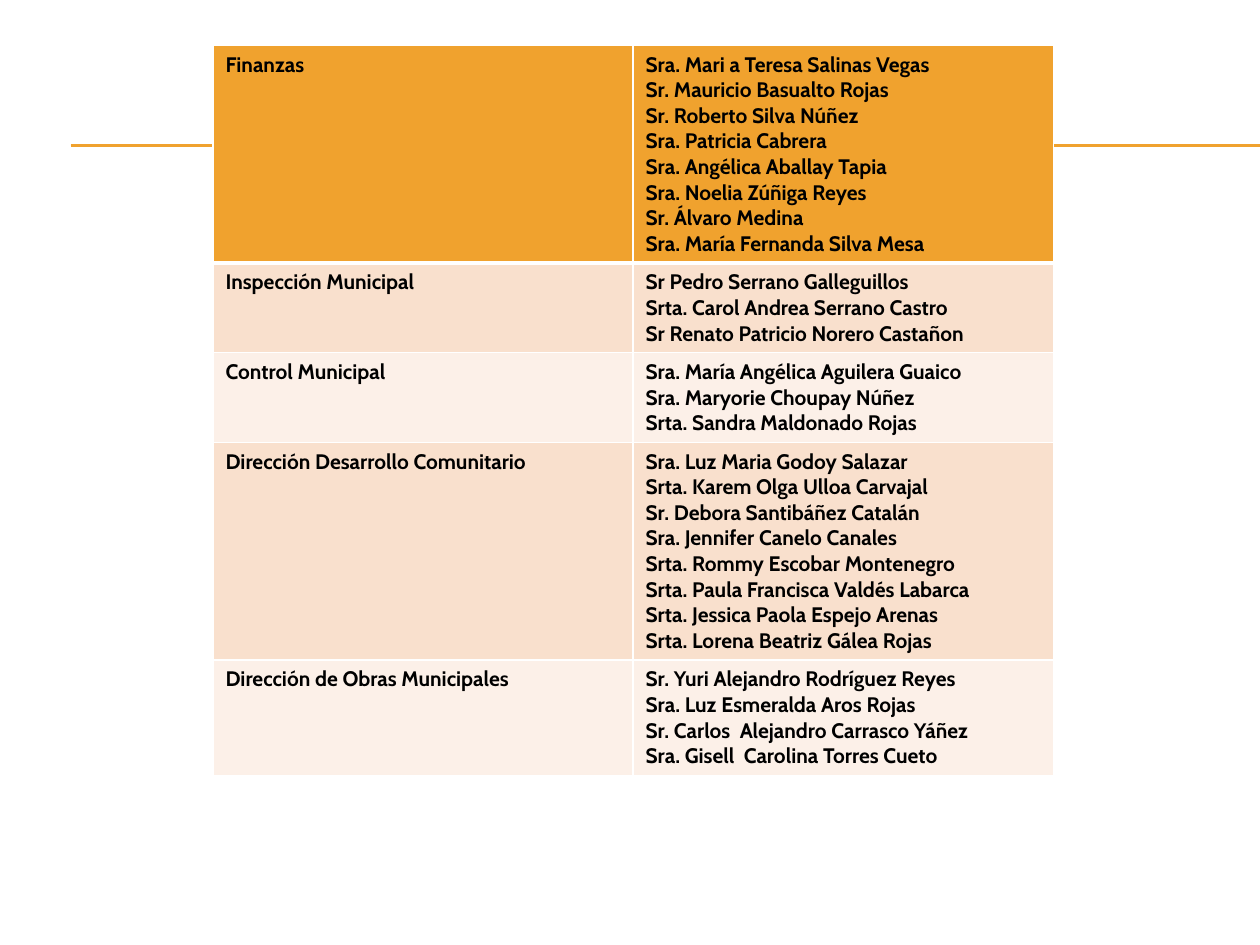
from dataclasses import dataclass

from lxml.etree import SubElement
from pptx import Presentation
from pptx.dml.color import RGBColor as Color
from pptx.enum.shapes import MSO_CONNECTOR as Connector
from pptx.oxml.ns import qn
from pptx.util import Inches, Pt


@dataclass(frozen=True)
class Theme:
    """Colours, font and sizes of the slide."""
    font: str = "Cabin"
    text_size: float = 12
    text: str = "000000"
    accent: str = "F0A22E"
    bands: tuple = ("FCF0E8", "F9E0CD")
    border: str = "FFFFFF"
    border_width: float = 1
    header_border_width: float = 3
    rule_width: float = 0.75


THEME = Theme()

DEPARTMENTS = [
    ("Finanzas", [
        "Sra. Mari a Teresa Salinas Vegas",
        "Sr. Mauricio Basualto Rojas",
        "Sr. Roberto Silva Núñez",
        "Sra. Patricia Cabrera",
        "Sra. Angélica Aballay Tapia",
        "Sra. Noelia Zúñiga Reyes",
        "Sr. Álvaro Medina",
        "Sra. María Fernanda Silva Mesa",
    ]),
    ("Inspección Municipal", [
        "Sr Pedro Serrano Galleguillos",
        "Srta. Carol Andrea Serrano Castro",
        "Sr Renato Patricio Norero Castañon",
    ]),
    ("Control Municipal", [
        "Sra. María Angélica Aguilera Guaico",
        "Sra. Maryorie Choupay Núñez",
        "Srta. Sandra Maldonado Rojas",
    ]),
    ("Dirección Desarrollo Comunitario", [
        "Sra. Luz Maria Godoy Salazar",
        "Srta. Karem Olga Ulloa Carvajal",
        "Sr. Debora Santibáñez Catalán",
        "Sra. Jennifer Canelo Canales",
        "Srta. Rommy Escobar Montenegro",
        "Srta. Paula Francisca Valdés Labarca",
        "Srta. Jessica Paola Espejo Arenas",
        "Srta. Lorena Beatriz Gálea Rojas",
    ]),
    ("Dirección de Obras Municipales", [
        "Sr. Yuri Alejandro Rodríguez Reyes",
        "Sra. Luz Esmeralda Aros Rojas",
        "Sr. Carlos  Alejandro Carrasco Yáñez",
        "Sra. Gisell  Carolina Torres Cueto",
    ]),
]


def add_rule(page, top):
    """Draw a thin horizontal rule running to the right edge."""
    rule = page.shapes.add_connector(
        Connector.STRAIGHT, Inches(0.56), Inches(top), Inches(10), Inches(top))
    rule.line.color.rgb = Color.from_string(THEME.accent)
    rule.line.width = Pt(THEME.rule_width)
    SubElement(rule._element.spPr, qn("a:effectLst"))


def set_borders(cell, top_width, bottom_width):
    """Give a cell its four solid borders."""
    properties = cell._tc.get_or_add_tcPr()
    side_width = THEME.border_width
    widths = {"L": side_width, "R": side_width, "T": top_width, "B": bottom_width}
    for side, width in widths.items():
        border = SubElement(properties, qn(f"a:ln{side}"), w=str(Pt(width)))
        fill = SubElement(border, qn("a:solidFill"))
        SubElement(fill, qn("a:srgbClr"), val=THEME.border)


def fill_cell(cell, lines, colour):
    """Write one paragraph per line and colour the cell."""
    cell.fill.solid()
    cell.fill.fore_color.rgb = Color.from_string(colour)
    cell.text = "\n".join(lines)
    for paragraph in cell.text_frame.paragraphs:
        font = paragraph.font
        font.name = THEME.font
        font.size = Pt(THEME.text_size)
        font.bold = True
        font.color.rgb = Color.from_string(THEME.text)


def add_staff_table(page):
    """Add the table of departments and their staff."""
    table = page.shapes.add_table(
        len(DEPARTMENTS), 2, Inches(1.69), Inches(0.36), Inches(6.67), Inches(5.7)).table
    for index, (department, staff) in enumerate(DEPARTMENTS):
        table.rows[index].height = Inches(0.1 + 0.2 * len(staff))
        colour = THEME.bands[index % 2] if index else THEME.accent
        top_width = THEME.header_border_width if index == 1 else THEME.border_width
        bottom_width = THEME.border_width if index else THEME.header_border_width
        for column, lines in enumerate(([department], staff)):
            cell = table.cell(index, column)
            set_borders(cell, top_width, bottom_width)
            fill_cell(cell, lines, colour)


def main():
    """Build and save the deck."""
    deck = Presentation()
    deck.slide_width, deck.slide_height = Inches(10), Inches(7.5)
    page = deck.slides.add_slide(deck.slide_layouts[6])
    for top in (1.15, 1.16):
        add_rule(page, top)
    add_staff_table(page)
    deck.save("out.pptx")


if __name__ == "__main__":
    main()
